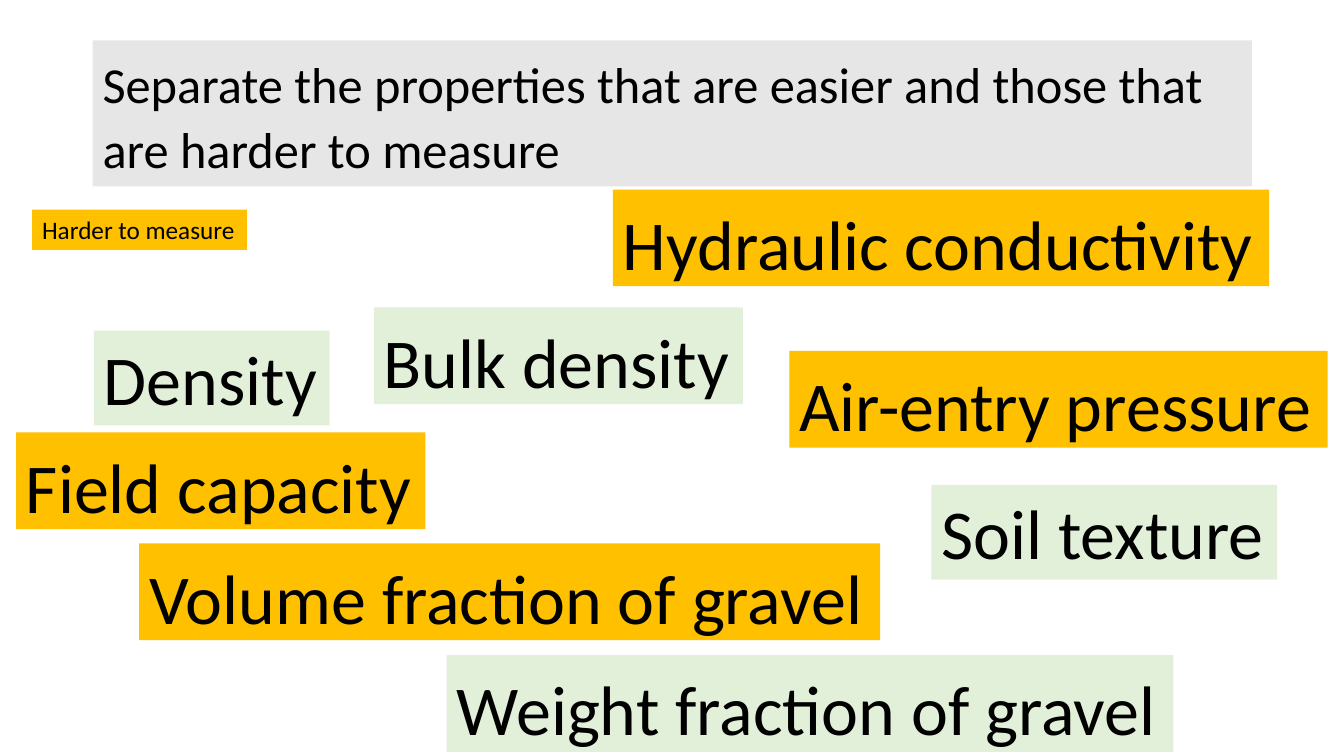
from dataclasses import dataclass

from pptx import Presentation
from pptx import util as u
from pptx.dml.color import RGBColor
from pptx.enum import text


@dataclass(frozen=True)
class Theme:
    font: str = "Calibri"
    ink: str = "000000"
    title_fill: str = "E7E6E6"
    easier: str = "E2F0D9"
    harder: str = "FFC000"
    title_size: int = 36
    property_size: int = 50
    key_size: int = 18


THEME = Theme()
LOOSE = dict(line_spacing=1.07, space_after=8)

# text, box (left, top, width, height), fill, paragraph spacing
PROPERTIES = [
    ("Bulk density", (267.1, 219.6, 263.5, 69.1), THEME.easier, LOOSE),
    ("Density", (67, 236.2, 168.5, 67.7), THEME.easier, {}),
    ("Soil texture", (665.3, 346.3, 247, 67.7), THEME.easier, {}),
    ("Weight fraction of gravel", (319, 468, 519.1, 69.1), THEME.easier, LOOSE),
    ("Field capacity", (11.5, 308.9, 292.3, 69.1), THEME.harder, LOOSE),
    ("Air-entry pressure", (563.8, 250.6, 384.5, 69.1), THEME.harder, LOOSE),
    ("Volume fraction of gravel", (99.4, 388.1, 529.2, 69.1), THEME.harder, LOOSE),
    ("Hydraulic conductivity", (437.8, 135.4, 468.7, 69.1), THEME.harder, LOOSE),
]


def add_text(s, words, box, *, fill, size, wrap=False,
             anchor=text.MSO_ANCHOR.TOP, line_spacing=None, space_after=0):
    """Add a filled text box; unwrapped boxes grow to fit their text."""
    sp = s.shapes.add_textbox(*map(u.Pt, box))
    sp.fill.solid()
    sp.fill.fore_color.rgb = RGBColor.from_string(fill)
    tf = sp.text_frame
    tf.word_wrap = wrap
    tf.auto_size = (text.MSO_AUTO_SIZE.NONE if wrap
                    else text.MSO_AUTO_SIZE.SHAPE_TO_FIT_TEXT)
    tf.vertical_anchor = anchor
    p = tf.paragraphs[0]
    p.line_spacing = line_spacing
    p.space_after = u.Pt(space_after)
    r = p.add_run()
    r.text = words
    r.font.name = THEME.font
    r.font.size = u.Pt(size)
    r.font.color.rgb = RGBColor.from_string(THEME.ink)


def add_title(s, box):
    add_text(s, "Separate the properties that are easier and those that "
             "are harder to measure", box, fill=THEME.title_fill,
             size=THEME.title_size, wrap=True,
             anchor=text.MSO_ANCHOR.MIDDLE, **LOOSE)


def add_properties(s, box):
    left, top = box[:2]
    for words, (x, y, w, h), fill, spacing in PROPERTIES:
        add_text(s, words, (left + x, top + y, w, h), fill=fill,
                 size=THEME.property_size, **spacing)


def add_key(s, box):
    add_text(s, "Harder to measure", box, fill=THEME.harder,
             size=THEME.key_size)


def main():
    prs = Presentation()
    prs.slide_width, prs.slide_height = u.Pt(960), u.Pt(540)
    s = prs.slides.add_slide(prs.slide_layouts[6])
    add_title(s, (66.2, 28.8, 828, 104.4))
    add_properties(s, (0, 0, 960, 540))
    add_key(s, (23, 149.8, 153.4, 28.8))
    prs.save("out.pptx")


if __name__ == "__main__":
    main()
